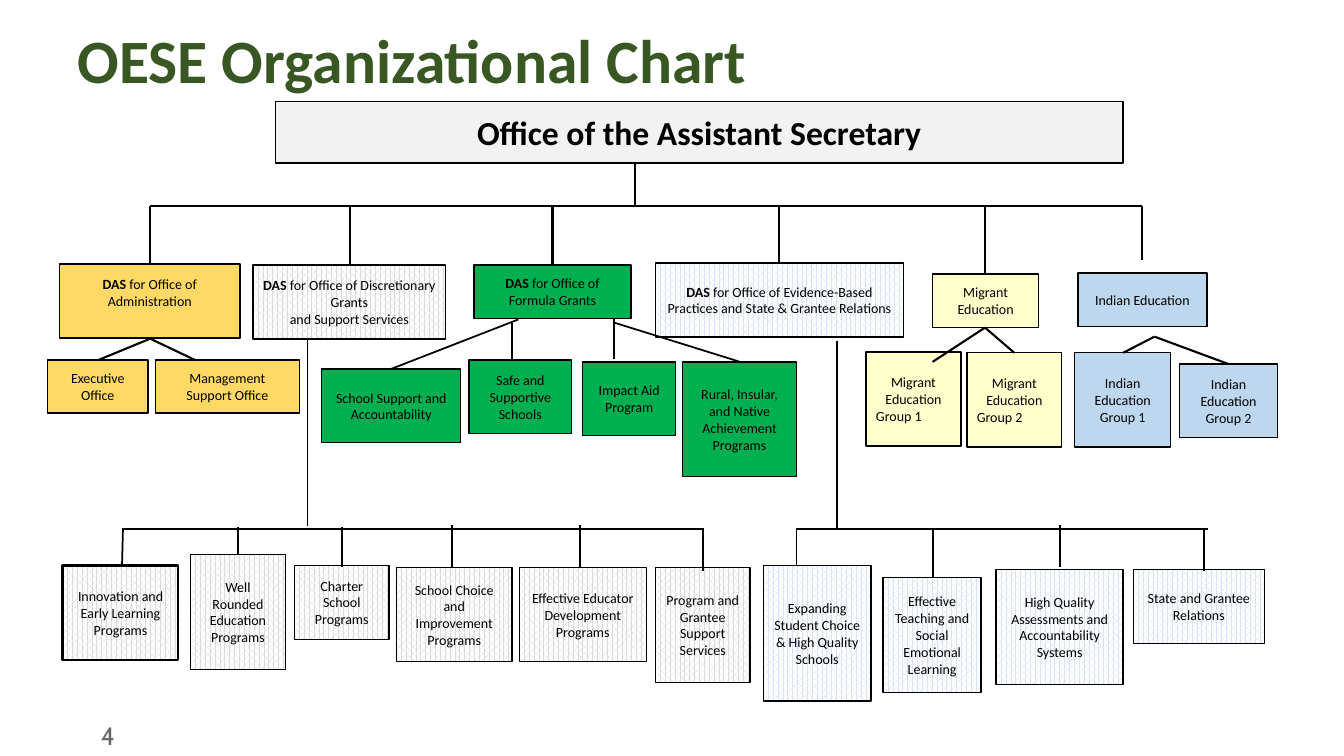
from dataclasses import dataclass

from lxml import etree
from pptx import Presentation
from pptx.dml.color import RGBColor
from pptx.enum.dml import MSO_PATTERN
from pptx.enum.shapes import MSO_CONNECTOR, MSO_SHAPE
from pptx.enum.text import MSO_ANCHOR, MSO_AUTO_SIZE, PP_ALIGN
from pptx.oxml.ns import qn
from pptx.util import Emu, Inches, Pt

RECTANGLE = MSO_SHAPE.RECTANGLE
STRAIGHT = MSO_CONNECTOR.STRAIGHT
DOTTED = MSO_PATTERN.PERCENT_70
LEFT, CENTER = PP_ALIGN.LEFT, PP_ALIGN.CENTER
TOP, MIDDLE = MSO_ANCHOR.TOP, MSO_ANCHOR.MIDDLE
NO_AUTOSIZE = MSO_AUTO_SIZE.NONE

BLACK = RGBColor(0x00, 0x00, 0x00)
WHITE = RGBColor(0xFF, 0xFF, 0xFF)
DARK_GREEN = RGBColor(0x38, 0x57, 0x23)
NUMBER_GRAY = RGBColor(0x66, 0x66, 0x66)
OFFICE_GRAY = RGBColor(0xF2, 0xF2, 0xF2)
GOLD = RGBColor(0xFF, 0xD9, 0x66)
GREEN = RGBColor(0x00, 0xB0, 0x50)
YELLOW = RGBColor(0xFF, 0xFF, 0xCC)
BLUE = RGBColor(0xBD, 0xD7, 0xEE)
DOT_GRAY = RGBColor(0xDB, 0xDB, 0xDB)
DOT_BLUE = RGBColor(0xDA, 0xE3, 0xF3)
DOT_COLORS = (DOT_GRAY, DOT_BLUE)

CELL = Inches(0.1)
BOX_PADDING_ROWS = 1.2
TEXT_LINE_ROWS = 2.04


@dataclass(frozen=True)
class Unit:
    text: str
    column: float
    row: float
    columns: float
    lines: float
    color: RGBColor
    lead: str = ""
    last_align: PP_ALIGN = CENTER
    bottom_rows: float = 0.5
    size: float = 10
    bold: bool = False
    border: float = 1


@dataclass(frozen=True)
class Drop:
    column: float
    top: float
    bottom: float
    weight: float = 1.25


@dataclass(frozen=True)
class Bar:
    row: float
    left: float
    right: float


@dataclass(frozen=True)
class Fan:
    column: float
    row: float
    ends: tuple[tuple[float, float], ...]
    weight: float = 1.5


UNITS = (
    Unit("Office of the Assistant Secretary", 27.3, 10.1, 84.1, 2.4, OFFICE_GRAY, size=24, bold=True),
    Unit(" for Office of Administration", 5.9, 26.2, 17.9, 3, GOLD, lead="DAS", bottom_rows=2.2),
    Unit(" for Office of Discretionary Grants\nand Support Services", 25.1, 26.3, 19.1, 3, DOT_GRAY, lead="DAS"),
    Unit(" for Office of Formula Grants", 47, 26.3, 15.6, 2, GREEN, lead="DAS"),
    Unit(" for Office of Evidence-Based Practices and State & Grantee Relations",
         65, 26.1, 24.6, 3, DOT_BLUE, lead="DAS"),
    Unit("Migrant Education", 92.5, 27.2, 10.5, 2, YELLOW),
    Unit("Indian Education", 106.9, 27.1, 12.8, 2, BLUE),
    Unit("Executive\nOffice", 4.7, 35.7, 10, 2, GOLD),
    Unit("Management Support Office", 15.4, 35.7, 14.3, 2, GOLD),
    Unit("School Support and Accountability", 31.9, 36.6, 13.8, 3, GREEN),
    Unit("Safe and Supportive Schools", 46.5, 35.7, 10.2, 3, GREEN),
    Unit("Impact Aid Program", 57.8, 35.9, 9.2, 3, GREEN),
    Unit("Rural, Insular, and Native Achievement Programs", 67.7, 35.9, 11.3, 5, GREEN),
    Unit("Migrant Education\nGroup 1", 85.9, 34.9, 9.4, 4, YELLOW, last_align=LEFT),
    Unit("Migrant Education\nGroup 2", 95.9, 35, 9.4, 4, YELLOW, last_align=LEFT),
    Unit("Indian Education\nGroup 1", 106.6, 35, 9.5, 4, BLUE),
    Unit("Indian Education\nGroup 2", 117, 36.1, 9.7, 3, BLUE),
    Unit("Innovation and Early Learning Programs", 6.2, 56.1, 11.5, 4, DOT_GRAY, border=1.5),
    Unit("Well Rounded Education Programs", 18.9, 55, 9.4, 5, DOT_GRAY),
    Unit("Charter School Programs", 29.2, 56.1, 9.4, 3, DOT_GRAY),
    Unit("School Choice and Improvement Programs", 39.3, 56.3, 11.5, 4, DOT_GRAY),
    Unit("Effective Educator Development Programs", 51.5, 56.3, 12.6, 4, DOT_GRAY),
    Unit("Program and Grantee Support Services", 65, 56.3, 9.4, 5, DOT_GRAY),
    Unit("Expanding Student Choice & High Quality Schools", 75.7, 56.1, 10.7, 6, DOT_BLUE),
    Unit("Effective Teaching and Social Emotional Learning", 87.6, 57.3, 9.7, 5, DOT_BLUE),
    Unit("High Quality Assessments and Accountability Systems", 98.8, 56.5, 12.6, 5, DOT_BLUE),
    Unit("State and Grantee Relations", 112.4, 56.5, 13, 3, DOT_BLUE),
)

BARS = (Bar(20.4, 14.9, 113.3), Bar(52.45, 12.2, 69.7), Bar(52.5, 79, 119.8))

DROPS = (
    Drop(63, 16.3, 20.4, 1.5),
    Drop(14.9, 20.4, 26.2, 1.5),
    Drop(34.7, 20.4, 26.3, 1.5),
    Drop(54.8, 20.4, 26.3, 1.5),
    Drop(77.3, 20.4, 26.1, 1.5),
    Drop(97.7, 20.4, 27.2),
    Drop(113.3, 20.4, 25.8, 1.5),
    Drop(50.8, 32, 35.6),
    Drop(60.9, 31.6, 35.6),
    Drop(30.5, 33.7, 52.2),
    Drop(83, 33.8, 52.5),
    Drop(23.6, 52.3, 55),
    Drop(33.9, 52.3, 56.3),
    Drop(44.8, 52.1, 56.3),
    Drop(57.5, 52.1, 56.3),
    Drop(69.7, 52.4, 56.6),
    Drop(79, 52.4, 56.2),
    Drop(92.5, 52.5, 57.3),
    Drop(105.1, 52.1, 56.3),
    Drop(119.4, 52.5, 56.6),
)

FANS = (
    Fan(14.9, 33.6, ((9.8, 35.7), (19.3, 35.7))),
    Fan(51.4, 31.7, ((38.8, 36.6),), 1.25),
    Fan(60.9, 32, ((73.4, 35.9),), 1.25),
    Fan(97.7, 32.5, ((92.5, 35.9), (100.6, 35))),
    Fan(114.5, 33.4, ((111.4, 35), (121.8, 36.1))),
    Fan(12.2, 52.4, ((12.1, 56.2),), 1.25),
)


def cells(count: float) -> Emu:
    return Emu(round(count * CELL))


def write_run(paragraph, text: str, *, size: float, color: RGBColor = BLACK,
              bold: bool = False, font: str = "Calibri") -> None:
    run = paragraph.add_run()
    run.text = text
    run.font.name = font
    run.font.size = Pt(size)
    run.font.bold = bold
    run.font.color.rgb = color


def draw_unit(slide, unit: Unit) -> None:
    height = BOX_PADDING_ROWS + TEXT_LINE_ROWS * unit.lines
    shape = slide.shapes.add_shape(
        RECTANGLE, cells(unit.column), cells(unit.row), cells(unit.columns), cells(height))
    shape.shadow.inherit = False
    if unit.color in DOT_COLORS:
        shape.fill.patterned()
        shape.fill.pattern = DOTTED
        shape.fill.fore_color.rgb = unit.color
        shape.fill.back_color.rgb = WHITE
    else:
        shape.fill.solid()
        shape.fill.fore_color.rgb = unit.color
    shape.line.color.rgb = BLACK
    shape.line.width = Pt(unit.border)
    frame = shape.text_frame
    frame.word_wrap = True
    frame.vertical_anchor = MIDDLE
    frame.margin_bottom = cells(unit.bottom_rows)
    for index, text in enumerate(unit.text.split("\n")):
        paragraph = frame.add_paragraph() if index else frame.paragraphs[0]
        paragraph.alignment = unit.last_align if index else CENTER
        if unit.lead and not index:
            write_run(paragraph, unit.lead, size=unit.size, bold=True)
        write_run(paragraph, text, size=unit.size, bold=unit.bold)


def draw_line(slide, start: tuple[float, float], end: tuple[float, float], weight: float = 1.5) -> None:
    connector = slide.shapes.add_connector(STRAIGHT, *map(cells, start + end))
    connector.line.color.rgb = BLACK
    connector.line.width = Pt(weight)
    etree.SubElement(connector._element.spPr, qn("a:effectLst"))


def draw_title(slide) -> None:
    title = slide.shapes.title
    title.left, title.top, title.width, title.height = map(cells, (6.7, 2.5, 120, 6.2))
    frame = title.text_frame
    frame.auto_size = NO_AUTOSIZE
    frame.vertical_anchor = TOP
    paragraph = frame.paragraphs[0]
    paragraph.alignment = LEFT
    paragraph.line_spacing = 0.9
    write_run(paragraph, "OESE Organizational Chart", size=44, color=DARK_GREEN, bold=True)


def draw_page_number(slide) -> None:
    frame = slide.shapes.add_textbox(*map(cells, (10, 71, 7.8, 4))).text_frame
    frame.word_wrap = True
    frame.margin_left = frame.margin_right = 0
    write_run(frame.paragraphs[0], "4", size=18, color=NUMBER_GRAY, font="Cabin")


def main() -> None:
    presentation = Presentation()
    presentation.slide_width = Inches(13.33)
    presentation.slide_height = Inches(7.5)
    slide = presentation.slides.add_slide(presentation.slide_layouts[5])
    draw_title(slide)
    draw_page_number(slide)
    for bar in BARS:
        draw_line(slide, (bar.left, bar.row), (bar.right, bar.row))
    for unit in UNITS:
        draw_unit(slide, unit)
    for drop in DROPS:
        draw_line(slide, (drop.column, drop.top), (drop.column, drop.bottom), drop.weight)
    for fan in FANS:
        for end in fan.ends:
            draw_line(slide, (fan.column, fan.row), end, fan.weight)
    presentation.save("out.pptx")


if __name__ == "__main__":
    main()
